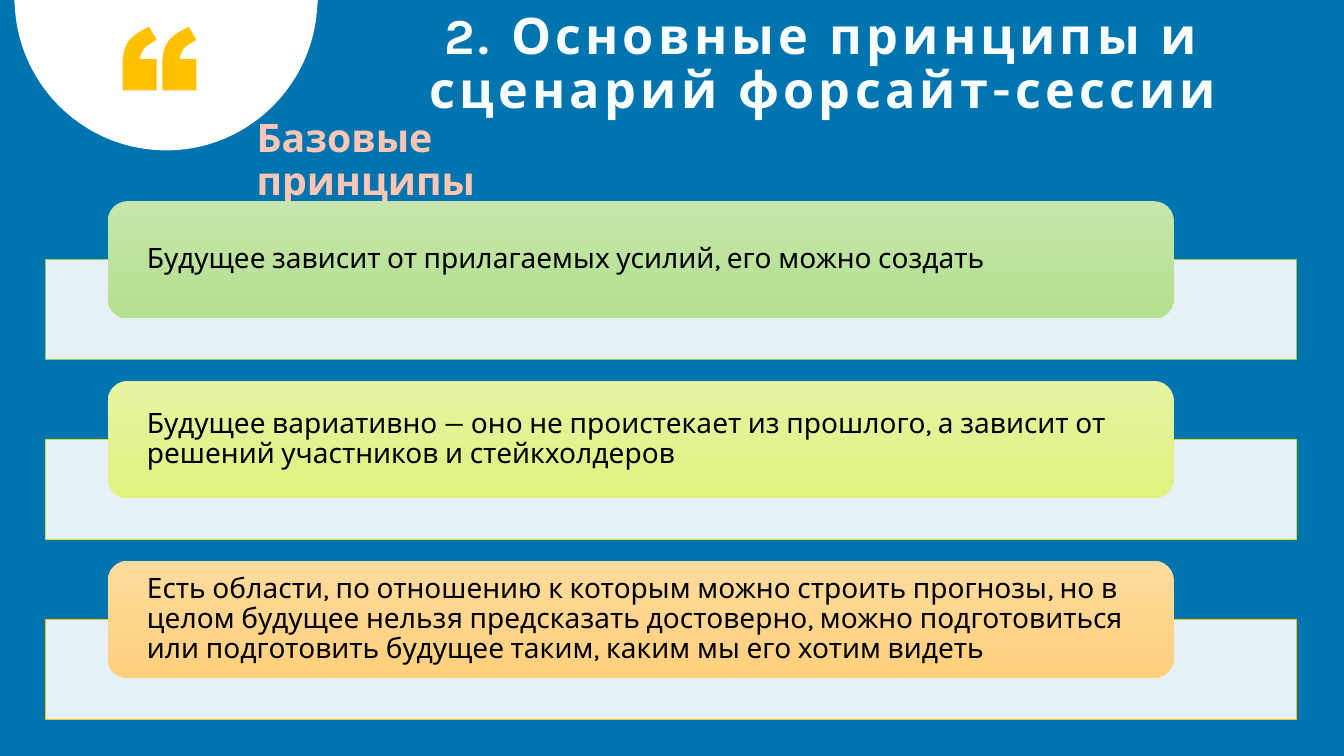
from dataclasses import dataclass

from lxml.etree import SubElement
from pptx import Presentation
from pptx.dml.color import RGBColor
from pptx.dml.fill import FillFormat
from pptx.enum.shapes import MSO_SHAPE
from pptx.enum.text import MSO_ANCHOR, PP_ALIGN
from pptx.oxml.ns import qn
from pptx.shapes.autoshape import Shape
from pptx.slide import Slide
from pptx.text.text import TextFrame, _Run
from pptx.util import Cm, Pt

FONT = "Karla"
BLUE = RGBColor(0x00, 0x74, 0xAF)
WHITE = RGBColor(0xFF, 0xFF, 0xFF)
PALE_WHITE = RGBColor(0xF8, 0xFD, 0xFF)
BLACK = RGBColor(0x00, 0x00, 0x00)
PEACH = RGBColor(0xFD, 0xC6, 0xB5)
GREEN = RGBColor(0x92, 0xD0, 0x50)
GREEN_TOP = RGBColor(0xC6, 0xE6, 0xAD)
GREEN_BOTTOM = RGBColor(0xB3, 0xE0, 0x8D)
LIME = RGBColor(0xCF, 0xE6, 0x2A)
LIME_TOP = RGBColor(0xE6, 0xF3, 0xA3)
LIME_BOTTOM = RGBColor(0xE0, 0xF2, 0x80)
AMBER = RGBColor(0xFF, 0xC0, 0x00)
AMBER_TOP = RGBColor(0xFF, 0xDB, 0x9E)
AMBER_BOTTOM = RGBColor(0xFF, 0xD0, 0x7C)

Point = tuple[float, float]
# A segment of one point is a line, one of three points a cubic curve
Segment = list[Point]


@dataclass
class Contour:
    left: float
    top: float
    start: Point
    segments: list[Segment]

    def place(self, point: Point) -> tuple[int, int]:
        return Cm(self.left + point[0]), Cm(self.top + point[1])


@dataclass
class Principle:
    text: str
    line: RGBColor
    top: RGBColor
    bottom: RGBColor


PRINCIPLES = [
    Principle("Будущее зависит от прилагаемых усилий, его можно создать",
              GREEN, GREEN_TOP, GREEN_BOTTOM),
    Principle("Будущее вариативно — оно не проистекает из прошлого, а зависит от "
              "решений участников и стейкхолдеров",
              LIME, LIME_TOP, LIME_BOTTOM),
    Principle("Есть области, по отношению к которым можно строить прогнозы, но в "
              "целом будущее нельзя предсказать достоверно, можно подготовиться "
              "или подготовить будущее таким, каким мы его хотим видеть",
              AMBER, AMBER_TOP, AMBER_BOTTOM),
]
ROW_PITCH = 4.53

HALF_DISC = [[(7.65, 0)], [(7.62, 0.36)],
             [(7.42, 2.29), (5.79, 3.79), (3.83, 3.79)],
             [(1.86, 3.79), (0.23, 2.29), (0.03, 0.36)]]
QUOTE_GLYPH = [[(0.86, 0.33)],
               [(0.71, 0.41), (0.58, 0.48), (0.53, 0.56)],
               [(0.48, 0.64), (0.45, 0.71), (0.44, 0.81)],
               [(0.86, 0.81)], [(0.86, 1.6)], [(0, 1.6)], [(0, 0.94)],
               [(0, 0.69), (0.05, 0.51), (0.15, 0.36)],
               [(0.25, 0.23), (0.43, 0.1), (0.67, 0)]]


def add_outline(slide: Slide, contours: list[Contour], color: RGBColor) -> None:
    first = contours[0]
    builder = slide.shapes.build_freeform(*first.place(first.start), scale=1.0)
    for contour in contours:
        if contour is not first:
            builder.move_to(*contour.place(contour.start))
        points = [contour.place(p) for segment in contour.segments for p in segment]
        builder.add_line_segments(points, close=True)
    shape = builder.convert_to_shape()
    shape.shadow.inherit = False
    shape.fill.solid()
    shape.fill.fore_color.rgb = color
    shape.line.fill.background()

    # Join the three points of each curve into one cubic command
    lines = iter(list(shape._element.iter(qn("a:lnTo"))))
    for contour in contours:
        for segment in contour.segments:
            commands = [next(lines) for _ in segment]
            if len(commands) == 3:
                commands[0].tag = qn("a:cubicBezTo")
                for command in commands[1:]:
                    commands[0].append(command[0])
                    command.getparent().remove(command)


def set_gradient(fill: FillFormat, top: RGBColor, bottom: RGBColor) -> None:
    fill.gradient()
    fill.gradient_angle = 270
    for stop, color in zip(fill.gradient_stops, (top, bottom)):
        stop.color.rgb = color


def write_text(frame: TextFrame, text: str, size: int, bold: bool = False,
               align: PP_ALIGN = PP_ALIGN.LEFT) -> _Run:
    frame.word_wrap = True
    paragraph = frame.paragraphs[0]
    paragraph.alignment = align
    paragraph.line_spacing = 0.9
    run = paragraph.add_run()
    run.text = text
    run.font.name = FONT
    run.font.size = Pt(size)
    run.font.bold = bold
    return run


def add_box(slide: Slide, kind: MSO_SHAPE, left: float, top: float,
            width: float, height: float) -> Shape:
    shape = slide.shapes.add_shape(kind, Cm(left), Cm(top), Cm(width), Cm(height))
    shape.shadow.inherit = False
    return shape


def add_principle(slide: Slide, principle: Principle, offset: float) -> None:
    # Translucent bar
    bar = add_box(slide, MSO_SHAPE.RECTANGLE, 1.14, 6.54 + offset, 31.52, 2.52)
    bar.fill.solid()
    bar.fill.fore_color.rgb = WHITE
    color = bar.fill._xPr.find(f"{qn('a:solidFill')}/{qn('a:srgbClr')}")
    SubElement(color, qn("a:alpha"), val="90000")
    bar.line.color.rgb = principle.line
    bar.line.width = Pt(0.5)

    # Rounded card with the wording
    card = add_box(slide, MSO_SHAPE.ROUNDED_RECTANGLE, 2.72, 5.07 + offset, 26.86, 2.95)
    set_gradient(card.fill, principle.top, principle.bottom)
    card.line.fill.background()
    frame = card.text_frame
    frame.margin_left = frame.margin_right = Cm(0.84)
    frame.margin_top = frame.margin_bottom = 0
    frame.vertical_anchor = MSO_ANCHOR.MIDDLE
    write_text(frame, principle.text, 20).font.color.rgb = BLACK


def main() -> None:
    presentation = Presentation()
    presentation.slide_width = Cm(33.87)
    presentation.slide_height = Cm(19.05)
    slide = presentation.slides.add_slide(presentation.slide_layouts[6])
    slide.background.fill.solid()
    slide.background.fill.fore_color.rgb = BLUE

    # White half disc at the top edge
    add_outline(slide, [Contour(0.36, 0, (0, 0), HALF_DISC)], WHITE)

    # Subtitle
    subtitle = slide.shapes.add_textbox(Cm(5.58), Cm(3.39), Cm(10.95), Cm(1.35))
    subtitle.text_frame.vertical_anchor = MSO_ANCHOR.MIDDLE
    run = write_text(subtitle.text_frame, "Базовые принципы", 28, bold=True)
    run.font.color.rgb = PEACH
    properties = subtitle.text_frame.paragraphs[0]._p.get_or_add_pPr()
    properties.set("marL", str(Cm(0.64)))

    # Quotation mark: one glyph, drawn twice
    marks = [Contour(left, 0.68, (0.67, 0), QUOTE_GLYPH) for left in (4.09, 3.09)]
    add_outline(slide, marks, AMBER)

    # Title
    title = slide.shapes.add_textbox(Cm(8.47), Cm(0.15), Cm(24.56), Cm(3.02))
    run = write_text(title.text_frame, "2. Основные принципы и сценарий форсайт-сессии",
                     36, bold=True, align=PP_ALIGN.CENTER)
    set_gradient(run.font.fill, PALE_WHITE, WHITE)
    run._r.get_or_add_rPr().set("spc", "300")

    # Principles
    for row, principle in enumerate(PRINCIPLES):
        add_principle(slide, principle, row * ROW_PITCH)

    presentation.save("out.pptx")


if __name__ == "__main__":
    main()
